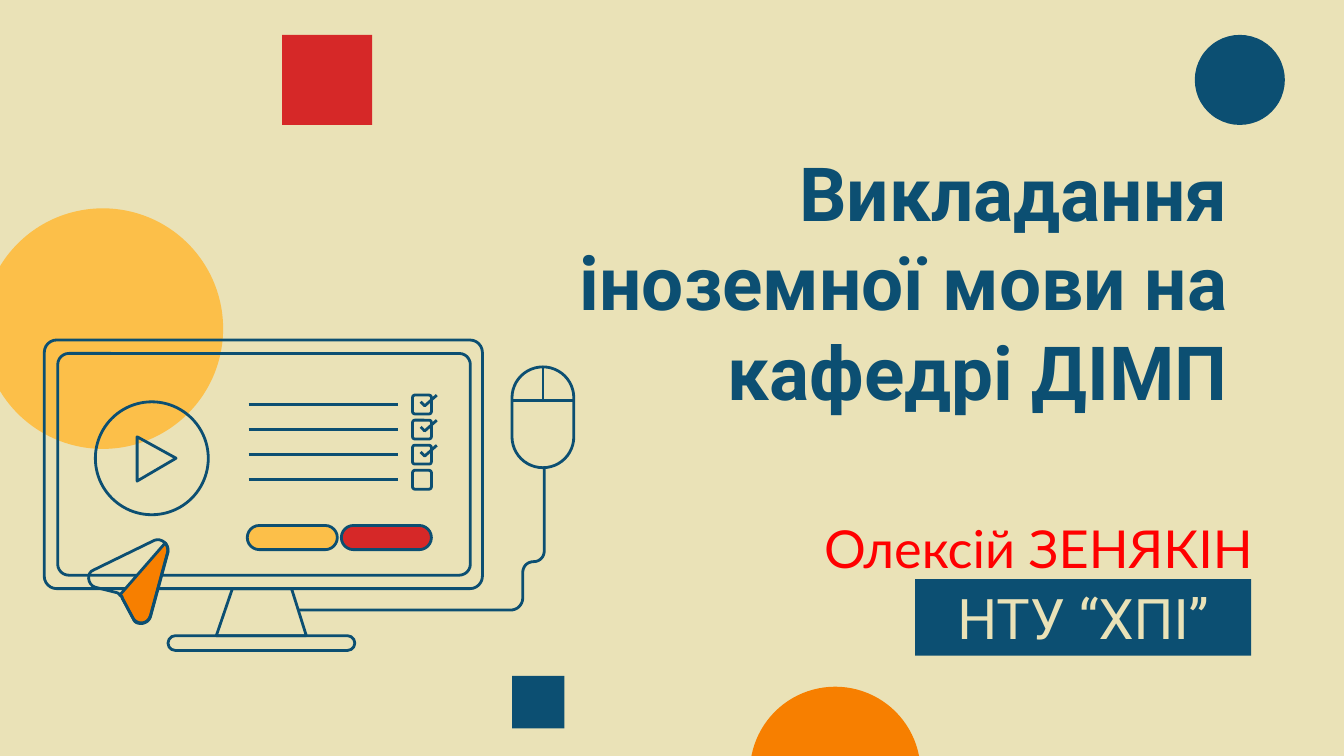
from lxml.etree import SubElement
from pptx import Presentation
from pptx.dml.color import RGBColor
from pptx.enum.shapes import MSO_CONNECTOR, MSO_SHAPE
from pptx.enum.text import MSO_ANCHOR, PP_ALIGN
from pptx.oxml.ns import qn
from pptx.util import Inches, Pt

SAND, NAVY, RED = "EAE2B7", "0C4F72", "D62828"
GOLD, ORANGE, BRIGHT = "FCBF49", "F77F00", "FF0000"
OVAL, RECT, ROUND = MSO_SHAPE.OVAL, MSO_SHAPE.RECTANGLE, MSO_SHAPE.ROUNDED_RECTANGLE

TITLE = "Викладання іноземної мови на кафедрі ДІМП"
AUTHOR = "Олексій ЗЕНЯКІН"
SCHOOL = "НТУ “ХПІ”"

# Plain decoration: kind, box, fill
DECOR = [
    (OVAL, (5.58, 5.11, 1.27, 1.27), ORANGE),
    (RECT, (2.1, 0.26, 0.67, 0.67), RED),
    (RECT, (3.81, 5.03, 0.39, 0.39), NAVY),
    (OVAL, (8.89, 0.26, 0.67, 0.67), NAVY),
    (OVAL, (-0.13, 1.55, 1.79, 1.79), GOLD),
]

# Outlined parts: kind, box, fill, corner share
PARTS = [
    (ROUND, (0.43, 2.63, 3.07, 1.65), None, 0.05),   # screen
    (ROUND, (0.33, 2.53, 3.26, 1.85), None, 0.05),   # case
    (ROUND, (1.25, 4.73, 1.39, 0.11), None, 0.5),    # foot
    (OVAL, (0.71, 2.99, 0.84, 0.84), None, None),    # play ring
    (ROUND, (2.54, 3.91, 0.67, 0.18), RED, 0.5),     # buttons
    (ROUND, (1.84, 3.91, 0.67, 0.18), GOLD, 0.5),
    (ROUND, (3.81, 2.73, 0.46, 0.75), None, 0.5),    # mouse
]

# Outlines: a pair is a straight step, six numbers are a cubic curve
STAND = [(2.28, 4.73), (2.17, 4.38), (1.73, 4.38), (1.61, 4.73)]
PLAY = [(1.31, 3.41), (1.02, 3.25), (1.02, 3.58)]
TICK = [(3.13, 0.05), (3.16, 0.08), (3.25, 0)]
FLAP = [(1.23, 4.04), (1.24, 4.05, 1.25, 4.08, 1.25, 4.11), (1.12, 4.59),
        (1.11, 4.62, 1.08, 4.64, 1.05, 4.64), (1.02, 4.64, 1, 4.63, 0.99, 4.6),
        (0.91, 4.45), (0.91, 4.44, 0.9, 4.43, 0.89, 4.43)]
ARROW = [(0.7, 4.24), (1.15, 4.02), (1.2, 4, 1.26, 4.05, 1.25, 4.1), (1.12, 4.58),
         (1.1, 4.65, 1.02, 4.65, 0.99, 4.6), (0.91, 4.45),
         (0.91, 4.44, 0.9, 4.43, 0.89, 4.42), (0.88, 4.42, 0.88, 4.41, 0.87, 4.41),
         (0.71, 4.37), (0.65, 4.35, 0.64, 4.26, 0.7, 4.24)]
CABLE = [(4.05, 3.48), (4.05, 4.1), (4.05, 4.14, 4.02, 4.18, 3.97, 4.18),
         (3.92, 4.18, 3.89, 4.22, 3.89, 4.26), (3.89, 4.45),
         (3.89, 4.5, 3.85, 4.54, 3.8, 4.54), (2.22, 4.54)]

# Checklist grid
ROWS, TICKED, TOP, LAST, BOX = 4, 3, 2.94, 3.5, 0.14
STEP = (LAST - TOP) / (ROWS - 1)

deck = Presentation()
deck.slide_width = Inches(10)
deck.slide_height = deck.slide_width * 9 // 16
slide = deck.slides.add_slide(deck.slide_layouts[6])
shapes = slide.shapes


def color(code):
    return RGBColor.from_string(code)


def paint(shape, fill=None, line=None):
    shape.shadow.inherit = False
    if fill:
        shape.fill.solid()
        shape.fill.fore_color.rgb = color(fill)
    else:
        shape.fill.background()
    if line:
        shape.line.color.rgb = color(line)
        shape.line.width = Pt(1.5)
    else:
        shape.line.fill.background()
    return shape


def add(kind, box, fill=None, line=None, corner=None):
    shape = shapes.add_shape(kind, *map(Inches, box))
    if corner:
        shape.adjustments[0] = corner
    return paint(shape, fill, line)


def trace(steps, count=8):
    """Turn straight and curved steps into a list of points."""
    dots = []
    for step in steps:
        if len(step) == 2:
            dots.append(step)
            continue
        ends = (dots[-1], step[:2], step[2:4], step[4:])
        for i in range(1, count + 1):
            t = i / count
            parts = ((1 - t) ** 3, 3 * t * (1 - t) ** 2, 3 * t * t * (1 - t), t ** 3)
            dots.append(tuple(sum(w * e[a] for w, e in zip(parts, ends)) for a in (0, 1)))
    return dots


def draw(steps, fill=None, close=True, down=0):
    dots = [(Inches(x), Inches(y + down)) for x, y in trace(steps)]
    form = shapes.build_freeform(*dots[0])
    form.add_line_segments(dots[1:], close=close)
    return paint(form.convert_to_shape(), fill, NAVY)


def rule(*ends):
    line = shapes.add_connector(MSO_CONNECTOR.STRAIGHT, *map(Inches, ends))
    line.line.color.rgb = color(NAVY)
    line.line.width = Pt(1.5)
    SubElement(line.element.spPr, qn("a:effectLst"))


def write(text, box, size, font, ink, bold=False, fill=None,
          align=PP_ALIGN.RIGHT, anchor=MSO_ANCHOR.MIDDLE):
    shape = add(RECT, box, fill) if fill else shapes.add_textbox(*map(Inches, box))
    frame = shape.text_frame
    frame.word_wrap = True
    frame.vertical_anchor = anchor
    frame.margin_left = frame.margin_right = Inches(0.1)
    frame.margin_top = frame.margin_bottom = Inches(0.1)
    para = frame.paragraphs[0]
    para.alignment = align
    run = para.add_run()
    run.text = text
    run.font.size, run.font.name, run.font.bold = Pt(size), font, bold
    run.font.color.rgb = color(ink)


# Background and decoration
slide.background.fill.solid()
slide.background.fill.fore_color.rgb = color(SAND)
for kind, box, fill in DECOR:
    add(kind, box, fill)

# Title and author
write(TITLE, (3.43, 0.37, 5.8, 2.82), 40, "Roboto", NAVY, bold=True, anchor=MSO_ANCHOR.BOTTOM)
write(AUTHOR, (4.45, 3.84, 4.97, 0.47), 28, "Lato", BRIGHT)

# Computer
draw(STAND)
for kind, box, fill, corner in PARTS:
    add(kind, box, fill, NAVY, corner)
draw(PLAY)

# Checklist
for row in range(ROWS):
    top = TOP + row * STEP
    add(ROUND, (3.07, top, BOX, BOX), None, NAVY, 0.12)
    rule(1.85, top + BOX / 2, 2.96, top + BOX / 2)
    if row < TICKED:
        draw(TICK, close=False, down=top)

# Pointer, mouse seams and cable
draw(FLAP, ORANGE)
draw(ARROW)
rule(3.81, 2.98, 4.27, 2.98)
rule(4.04, 2.73, 4.04, 2.98)
draw(CABLE, close=False)

# School label
write(SCHOOL, (6.81, 4.31, 2.5, 0.57), 30, "Roboto", SAND, fill=NAVY, align=PP_ALIGN.CENTER)

deck.save("out.pptx")
